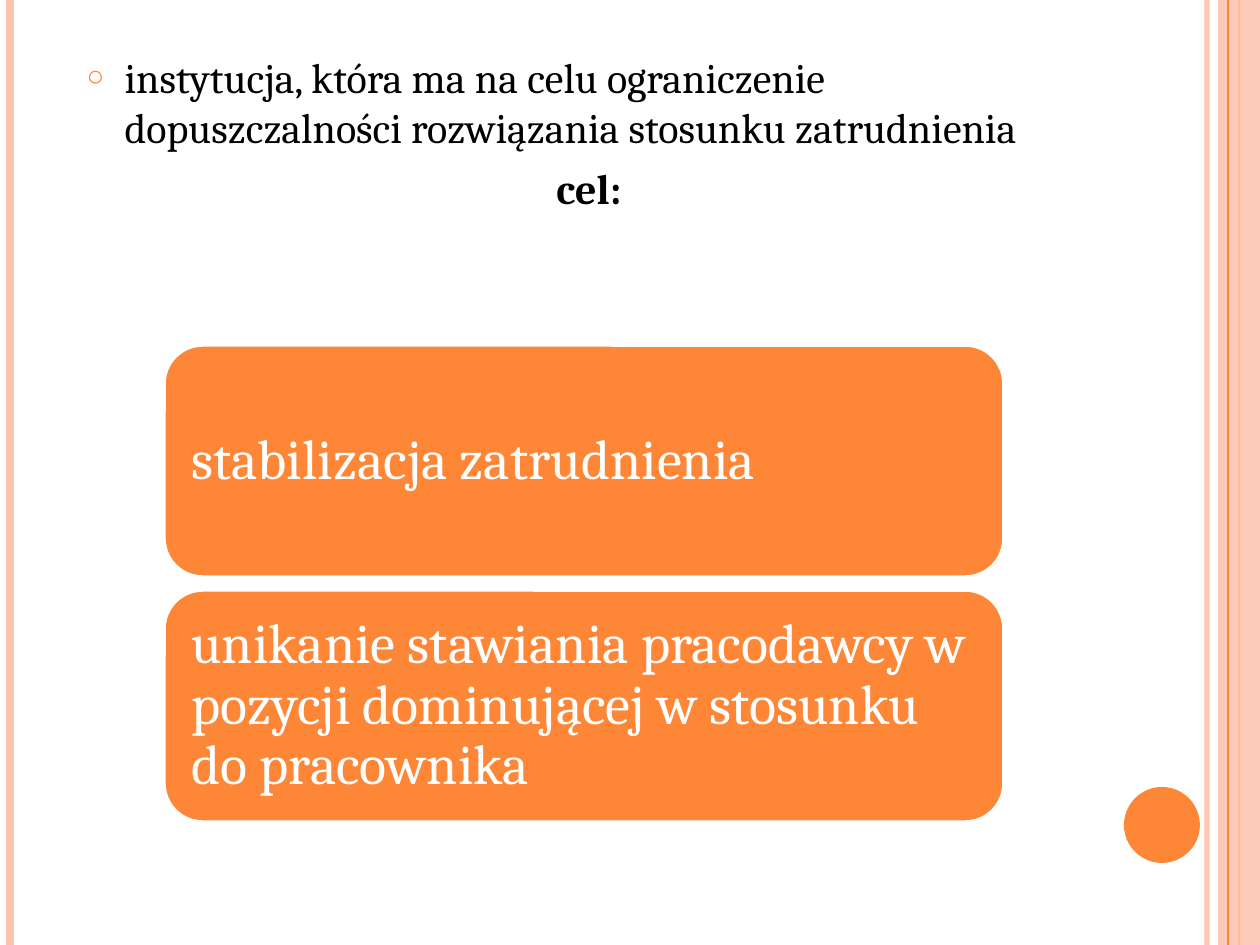
from lxml import etree
from pptx import Presentation
from pptx.dml.color import RGBColor
from pptx.enum.shapes import MSO_CONNECTOR, MSO_SHAPE
from pptx.enum.text import MSO_ANCHOR, MSO_AUTO_SIZE, PP_ALIGN
from pptx.oxml.ns import qn
from pptx.util import Emu, Pt

STRAIGHT = MSO_CONNECTOR.STRAIGHT
RECTANGLE = MSO_SHAPE.RECTANGLE
ROUNDED = MSO_SHAPE.ROUNDED_RECTANGLE
OVAL = MSO_SHAPE.OVAL
TOP = MSO_ANCHOR.TOP
MIDDLE = MSO_ANCHOR.MIDDLE
NO_FIT = MSO_AUTO_SIZE.NONE
LEFT = PP_ALIGN.LEFT
CENTER = PP_ALIGN.CENTER

SLIDE_WIDTH = 1260
SLIDE_HEIGHT = 945


def px(value):
    return Emu(round(value * 914400 / 126))


def color(value):
    return RGBColor.from_string(value)


def add_element(parent, tag, **attributes):
    return etree.SubElement(parent, qn(tag), attributes)


class SlideBuilder:
    font = "Cambria"
    accent = "FE8637"
    pale = "FEC3AE"
    black = "000000"
    white = "FFFFFF"

    def __init__(self, presentation):
        self.slide = presentation.slides.add_slide(presentation.slide_layouts[1])
        title = self.slide.shapes.title
        title.element.getparent().remove(title.element)

    def set_opacity(self, element, percent):
        for color_element in element.iter(qn("a:srgbClr")):
            add_element(color_element, "a:alpha", val=str(percent * 1000))

    def stripe(self, x, width, line_color, opacity=100):
        line = self.slide.shapes.add_connector(
            STRAIGHT, px(x), 0, px(x), px(SLIDE_HEIGHT))
        line.line.color.rgb = color(line_color)
        line.line.width = Pt(width)
        properties = line.element.spPr
        if opacity < 100:
            self.set_opacity(properties, opacity)
        add_element(properties, "a:effectLst")

    def shape(self, kind, x, y, width, height, fill, opacity=100):
        shape = self.slide.shapes.add_shape(
            kind, px(x), px(y), px(width), px(height))
        shape.shadow.inherit = False
        shape.fill.solid()
        shape.fill.fore_color.rgb = color(fill)
        shape.line.fill.background()
        if opacity < 100:
            self.set_opacity(shape.element.spPr, opacity)
        return shape

    def run(self, paragraph, text, size, text_color, bold=False):
        run = paragraph.add_run()
        run.text = text
        run.font.name = self.font
        run.font.size = Pt(size)
        run.font.bold = bold
        run.font.color.rgb = color(text_color)

    def card(self, x, y, width, height, text):
        card = self.shape(ROUNDED, x, y, width, height, self.accent)
        card.line.color.rgb = color(self.white)
        card.line.width = Pt(2)
        frame = card.text_frame
        frame.word_wrap = True
        frame.vertical_anchor = MIDDLE
        frame.margin_left = frame.margin_right = px(16)
        frame.margin_top = frame.margin_bottom = px(16)
        paragraph = frame.paragraphs[0]
        paragraph.alignment = LEFT
        paragraph.line_spacing = 0.9
        self.run(paragraph, text, 32, self.white)

    def bullet(self, properties):
        bullet_color = add_element(properties, "a:buClr")
        add_element(bullet_color, "a:srgbClr", val=self.accent)
        add_element(properties, "a:buSzPct", val="70000")
        add_element(properties, "a:buChar", char="○")

    def body(self, x, y, width, height, statement, heading):
        body = self.slide.placeholders[1]
        body.left, body.top = px(x), px(y)
        body.width, body.height = px(width), px(height)
        frame = body.text_frame
        frame.word_wrap = True
        frame.auto_size = NO_FIT
        frame.vertical_anchor = TOP
        first = frame.paragraphs[0]
        second = frame.add_paragraph()
        for paragraph in (first, second):
            properties = paragraph._p.get_or_add_pPr()
            properties.set("marL", str(px(38)))
            properties.set("indent", str(-px(38)))
        self.bullet(first._p.pPr)
        add_element(second._p.pPr, "a:buNone")
        first.alignment = LEFT
        first.space_before = Pt(0)
        second.alignment = CENTER
        second.space_before = Pt(6)
        self.run(first, statement, 24, self.black)
        self.run(second, heading, 24, self.black, bold=True)


def main():
    presentation = Presentation()
    presentation.slide_width = px(SLIDE_WIDTH)
    presentation.slide_height = px(SLIDE_HEIGHT)
    builder = SlideBuilder(presentation)

    builder.stripe(1207, 3, builder.pale, opacity=93)
    builder.stripe(10, 4.5, builder.pale)
    builder.stripe(1239, 1.5, builder.accent)
    builder.shape(RECTANGLE, 1218, 0, 42, SLIDE_HEIGHT, builder.pale, opacity=87)
    builder.stripe(1228, 0.75, builder.accent)
    builder.shape(OVAL, 1124, 787, 76, 76, builder.accent)

    builder.body(
        74, 45, 1030, 672,
        "instytucja, która ma na celu ograniczenie dopuszczalności "
        "rozwiązania stosunku zatrudnienia",
        "cel:")

    goals = [
        "stabilizacja zatrudnienia",
        "unikanie stawiania pracodawcy w pozycji dominującej w stosunku "
        "do pracownika",
    ]
    for index, goal in enumerate(goals):
        builder.card(164, 345 + index * 245, 840, 232, goal)

    presentation.save("out.pptx")


if __name__ == "__main__":
    main()
